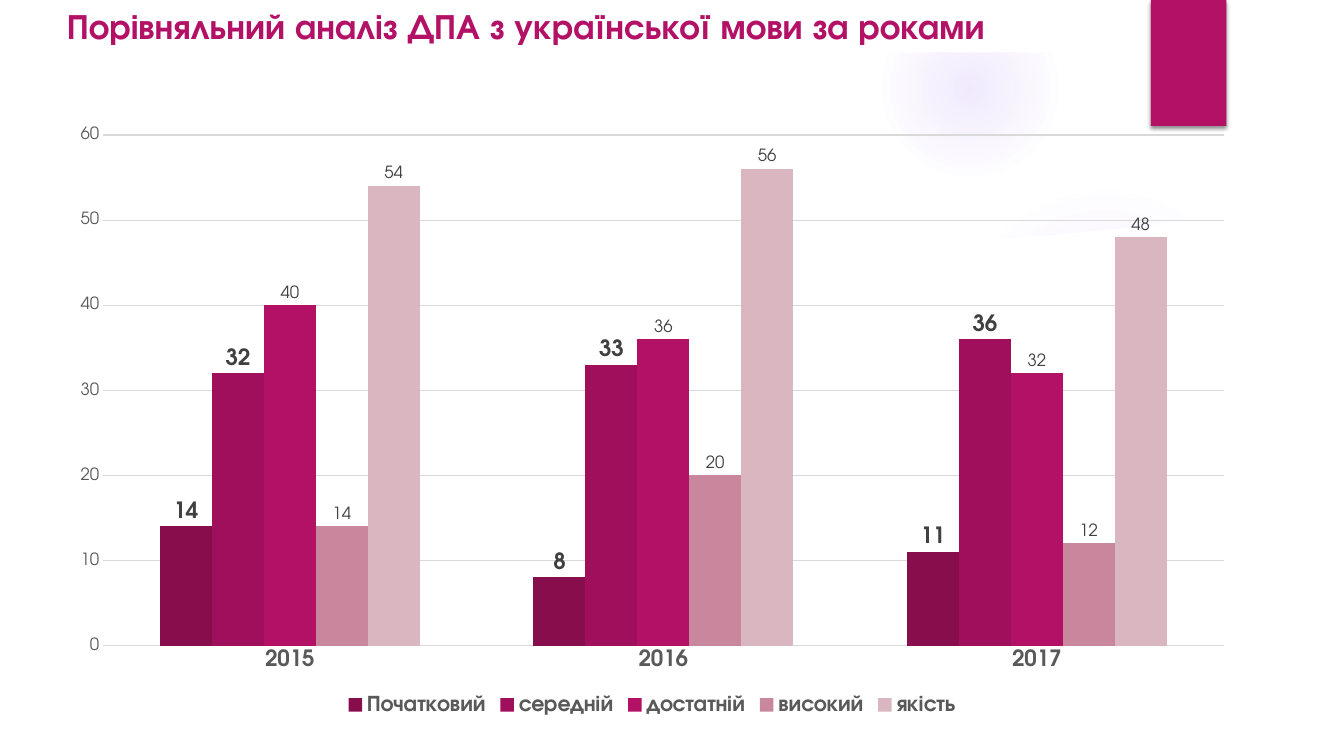
from lxml import etree
from pptx import Presentation
from pptx.chart.data import CategoryChartData
from pptx.dml.color import RGBColor
from pptx.enum.chart import XL_CHART_TYPE as CT, XL_LABEL_POSITION as LP
from pptx.enum.chart import XL_LEGEND_POSITION as LEG, XL_TICK_MARK as TICK
from pptx.enum.shapes import MSO_SHAPE as SHAPE
from pptx.enum.text import MSO_ANCHOR, MSO_AUTO_SIZE, PP_ALIGN
from pptx.oxml import parse_xml
from pptx.oxml.ns import qn
from pptx.util import Inches, Pt

COLS, ROWS = 160, 90
UNIT = Inches(7.5) / ROWS
FONT = "TeX Gyre Adventor"
ACCENT, GLOW, WHITE = "B31166", "9B6BF2", "FFFFFF"
TEXT, LABEL, GRID = "595959", "404040", "D9D9D9"
NS = 'xmlns:a="http://schemas.openxmlformats.org/drawingml/2006/main"'

TITLE = "Порівняльний аналіз ДПА з української мови за роками"
YEARS = ["2015", "2016", "2017"]
LEVELS = [
    ("Початковий", (14, 8, 11), "880D4D", 16, True),
    ("середній", (32, 33, 36), "9F0F5B", 16, True),
    ("достатній", (40, 36, 32), ACCENT, 12, False),
    ("високий", (14, 20, 12), "C8879C", 12, False),
    ("якість", (54, 56, 48), "DAB6C1", 12, False),
]
PANEL = [(6, 24.5), (22.4, 26.5), (48.1, 28.6), (81.8, 29.8), (107.3, 29.3),
         (120.5, 28.4), (133.9, 27.2), (144, 26), (154, 24.5), (154, 84), (6, 84)]


def grid(*cells):
    return [round(c * UNIT) for c in cells]


def rgb(value):
    return RGBColor.from_string(value)


def set_font(font, size, color, bold=False):
    font.name, font.size, font.bold = FONT, Pt(size), bold
    font.color.rgb = rgb(color)


def paint(sp, color):
    sp.shadow.inherit = False
    sp.fill.solid()
    sp.fill.fore_color.rgb = rgb(color)
    sp.line.fill.background()


def add_rect(s, cells, color):
    sp = s.shapes.add_shape(SHAPE.RECTANGLE, *grid(*cells))
    paint(sp, color)
    return sp


def add_glow(s, left, top, size, stops):
    sp = s.shapes.add_shape(SHAPE.OVAL, *grid(left, top, size, size))
    paint(sp, WHITE)
    marks = "".join(
        f'<a:gs pos="{pos * 1000}"><a:srgbClr val="{GLOW}">'
        f'<a:alpha val="{alpha * 1000}"/></a:srgbClr></a:gs>' for pos, alpha in stops)
    gradient = parse_xml(
        f'<a:gradFill {NS}><a:gsLst>{marks}</a:gsLst><a:path path="circle">'
        '<a:fillToRect l="50000" t="50000" r="50000" b="50000"/></a:path></a:gradFill>')
    solid = sp.element.spPr.find(qn("a:solidFill"))
    solid.getparent().replace(solid, gradient)


def add_panel(s, points):
    start, *rest = [grid(*point) for point in points]
    builder = s.shapes.build_freeform(*start)
    builder.add_line_segments(rest, close=True)
    paint(builder.convert_to_shape(), WHITE)


def add_shadow(sp):
    effects = sp.element.spPr.find(qn("a:effectLst"))
    shadow = etree.SubElement(effects, qn("a:outerShdw"), blurRad=str(Pt(3)),
                              dist=str(Pt(2)), dir="5400000", rotWithShape="0")
    color = etree.SubElement(shadow, qn("a:srgbClr"), val="000000")
    etree.SubElement(color, qn("a:alpha"), val="45000")


def set_title(s, cells, text):
    sp = s.shapes.title
    sp.element.getparent().append(sp.element)
    sp.left, sp.top, sp.width, sp.height = grid(*cells)
    tf = sp.text_frame
    tf.text = text
    tf.word_wrap, tf.auto_size = True, MSO_AUTO_SIZE.NONE
    tf.vertical_anchor = MSO_ANCHOR.MIDDLE
    p = tf.paragraphs[0]
    p.alignment = PP_ALIGN.LEFT
    set_font(p.font, 25.2, ACCENT, True)


def style_axis(axis, size, bold):
    axis.major_tick_mark = axis.minor_tick_mark = TICK.NONE
    set_font(axis.tick_labels.font, size, TEXT, bold)


def style_line(line):
    line.color.rgb = rgb(GRID)
    line.width = Pt(0.75)


def style_series(series, color, size, bold):
    series.format.fill.solid()
    series.format.fill.fore_color.rgb = rgb(color)
    series.invert_if_negative = False
    labels = series.data_labels
    labels.show_value = True
    labels.position = LP.OUTSIDE_END
    set_font(labels.font, size, LABEL, bold)


def add_column_chart(s, cells):
    data = CategoryChartData()
    data.categories = YEARS
    for name, values, *_ in LEVELS:
        data.add_series(name, values)
    chart = s.shapes.add_chart(CT.COLUMN_CLUSTERED, *grid(*cells), data).chart
    set_font(chart.font, 10, "000000")
    chart.has_title = False
    chart.has_legend = True
    chart.legend.position = LEG.BOTTOM
    chart.legend.include_in_layout = False
    set_font(chart.legend.font, 16, TEXT, True)
    style_axis(chart.category_axis, 16, True)
    style_line(chart.category_axis.format.line)
    values_axis = chart.value_axis
    style_axis(values_axis, 12, False)
    values_axis.format.line.fill.background()
    values_axis.minimum_scale, values_axis.maximum_scale = 0, 60
    values_axis.major_unit = 10
    style_line(values_axis.major_gridlines.format.line)
    plot = chart.plots[0]
    plot.gap_width, plot.overlap, plot.vary_by_categories = 219, 0, False
    for series, (_, _, *style) in zip(plot.series, LEVELS):
        style_series(series, *style)


def main():
    prs = Presentation()
    prs.slide_width, prs.slide_height = grid(COLS, ROWS)
    s = prs.slides.add_slide(prs.slide_layouts[5])
    add_glow(s, 113, 22, 37, [(0, 7), (36, 6), (69, 0), (100, 0)])
    add_glow(s, 105, 0, 21, [(0, 14), (36, 7), (73, 0), (100, 0)])
    add_panel(s, PANEL)
    add_rect(s, (0, 0, COLS, 6.25), WHITE)
    add_shadow(add_rect(s, (137, 0, 9, 15), ACCENT))
    set_title(s, (6.75, 0, 128.6, 6), TITLE)
    add_column_chart(s, (6.75, 13.7, 141.75, 72))
    prs.save("out.pptx")


if __name__ == "__main__":
    main()
